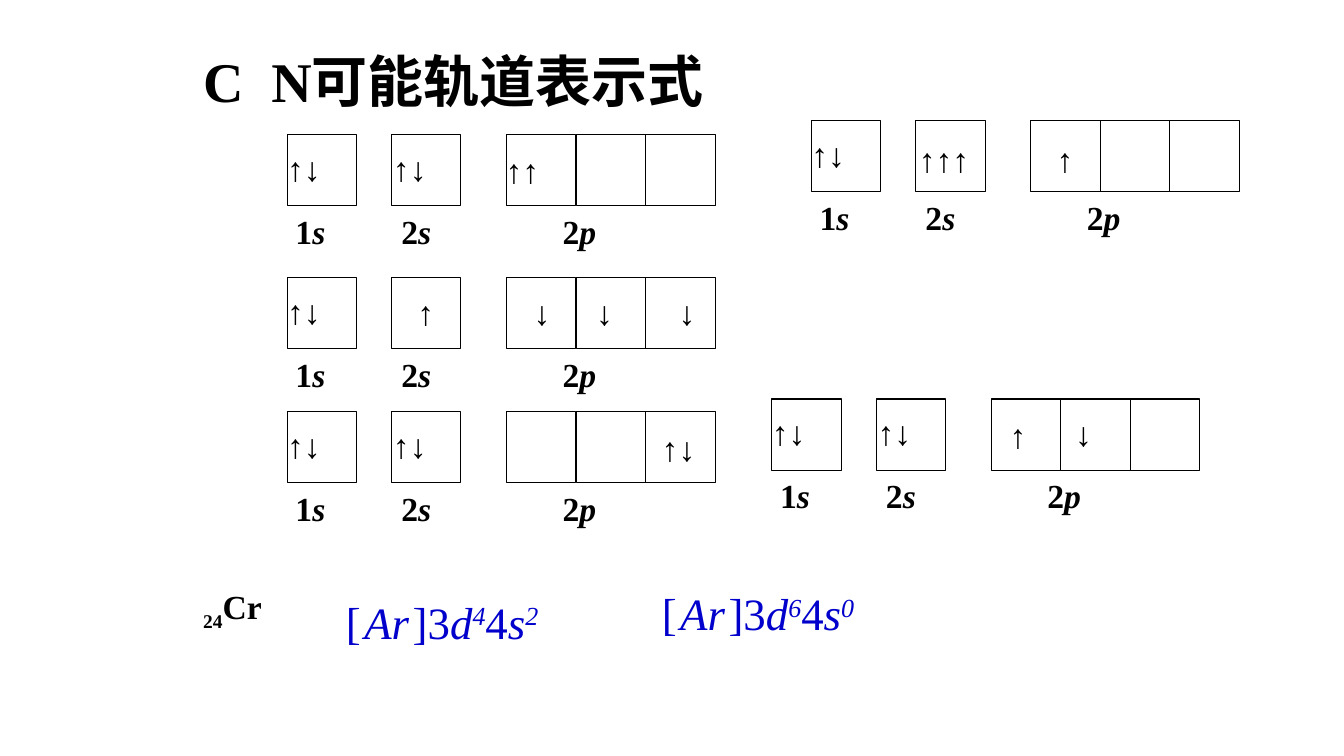
from dataclasses import dataclass, field
from typing import Any

from lxml.etree import SubElement
from pptx import Presentation
from pptx.dml.color import RGBColor
from pptx.enum.shapes import MSO_SHAPE
from pptx.enum.text import MSO_AUTO_SIZE
from pptx.oxml.ns import qn
from pptx.util import Inches, Pt

COLOURS = {"ink": "000000", "formula": "0000CC"}
SERIF, SANS = "Times New Roman", "Arial"

# The slide is a grid of 160 columns by 90 rows of square cells.
SLIDE_WIDTH, SLIDE_HEIGHT = Inches(13.33), Inches(7.5)
COLUMN, ROW = SLIDE_WIDTH / 160, SLIDE_HEIGHT / 90

BOX_WIDTH, BOX_HEIGHT = 8.28, 8.5
BOX_COLUMNS = [0, 12.4] + [26.1 + index * BOX_WIDTH for index in range(3)]
PAIR_WIDTH, SINGLE_WIDTH, LINE_HEIGHT = 6.4, 4.4, 6

BOLD = {"size": Pt(24), "bold": True, "name": SERIF}
ARROW = BOLD | {"name": SANS}
TITLE = BOLD | {"size": Pt(40)}
FORMULA = {"size": Pt(32), "name": SERIF}
FORMULA_ITALIC = FORMULA | {"italic": True}
FORMULA_GAP = FORMULA | {"size": Pt(10)}


@dataclass
class Run:
    text: str
    style: dict[str, Any]
    marks: dict[str, int] = field(default_factory=dict)


@dataclass
class Label:
    column: float
    row: float
    width: float
    runs: list[Run]
    height: float = LINE_HEIGHT
    colour: str = "ink"
    wrap: bool = False
    tab_stops: tuple[float, ...] = ()


@dataclass
class Diagram:
    column: float
    row: float
    electrons: list[Label]


def electrons(text: str, column: float, row: float, width: float = PAIR_WIDTH,
              **options: Any) -> Label:
    return Label(column, row, width, [Run(text, ARROW)], **options)


def subshell(number: str, letter: str, column: float, width: float) -> Label:
    return Label(column, BOX_HEIGHT, width,
                 [Run(number, BOLD), Run(letter, BOLD | {"italic": True})])


def configuration(column: float, row: float, d_count: str, s_count: str) -> Label:
    raised = {"baseline": 30000}
    return Label(column, row, 29, [
        Run("[", FORMULA), Run(" ", FORMULA_GAP), Run("Ar", FORMULA_ITALIC),
        Run(" ", FORMULA_GAP), Run("]3", FORMULA), Run("d", FORMULA_ITALIC),
        Run(d_count, FORMULA_ITALIC, raised), Run("4", FORMULA),
        Run("s", FORMULA_ITALIC), Run(s_count, FORMULA_ITALIC, raised),
    ], height=7.7, colour="formula", wrap=True)


SHARED_LABELS = [
    Label(-1.2, 1, PAIR_WIDTH, [Run("↑↓", BOLD)]),
    subshell("1", "s", -0.2, 6),
    subshell("2", "s", 12.4, 6),
    subshell("2", "p", 31.6, 6.4),
]
PAIRED_2S = electrons("↑↓", 11.4, 1)

DIAGRAMS = [
    Diagram(34.2, 16, [PAIRED_2S, electrons("↑↑", 24.8, 1.3, 13, wrap=True)]),
    Diagram(34.2, 33, [
        electrons("↑", 14.3, 1.2, SINGLE_WIDTH),
        electrons("\t↓\t↓\t↓", 24.8, 1.2, 26, wrap=True, tab_stops=(3.36, 10.8, 20.6)),
    ]),
    Diagram(34.2, 49, [PAIRED_2S, electrons("↑↓", 43.4, 1.3)]),
    Diagram(91.9, 47.5, [
        PAIRED_2S,
        electrons("↑", 27.1, 1.3, SINGLE_WIDTH),
        electrons("↓", 34.9, 1.1, SINGLE_WIDTH),
    ]),
    Diagram(96.6, 14.3, [
        electrons("↑", 28, 1.7, SINGLE_WIDTH),
        electrons("↑↑↑", 11.6, 1.7, 13, wrap=True),
    ]),
]

SLIDE_LABELS = [
    Label(23, 5, 67, [Run("C", TITLE), Run(" ", TITLE, {"spc": 1000}),
                      Run("N可能轨道表示式", TITLE)], height=9.2, wrap=True),
    Label(23, 69.2, 9.7, [Run("24", BOLD, {"baseline": -25000}), Run("Cr", BOLD)]),
    configuration(40, 70.2, "4", "2"),
    configuration(77.6, 69.2, "6", "0"),
]


def grid_frame(column: float, row: float, width: float, height: float) -> list[int]:
    return [round(column * COLUMN), round(row * ROW),
            round(width * COLUMN), round(height * ROW)]


def draw_label(shapes: Any, label: Label, column: float = 0, row: float = 0) -> None:
    """Draw a label whose place is counted from the given column and row."""
    text_box = shapes.add_textbox(*grid_frame(
        column + label.column, row + label.row, label.width, label.height))
    text_frame = text_box.text_frame
    text_frame.word_wrap = label.wrap
    text_frame.auto_size = MSO_AUTO_SIZE.SHAPE_TO_FIT_TEXT
    paragraph = text_frame.paragraphs[0]
    if label.tab_stops:
        tab_list = SubElement(paragraph._p.get_or_add_pPr(), qn("a:tabLst"))
        for stop in label.tab_stops:
            SubElement(tab_list, qn("a:tab"), pos=str(round(stop * COLUMN)), algn="l")
    for part in label.runs:
        run = paragraph.add_run()
        run.text = part.text
        for attribute, value in part.style.items():
            setattr(run.font, attribute, value)
        run.font.color.rgb = RGBColor.from_string(COLOURS[label.colour])
        for attribute, value in part.marks.items():
            run._r.get_or_add_rPr().set(attribute, str(value))


def draw_orbital_box(shapes: Any, column: float, row: float) -> None:
    box = shapes.add_shape(MSO_SHAPE.RECTANGLE,
                           *grid_frame(column, row, BOX_WIDTH, BOX_HEIGHT))
    box.shadow.inherit = False
    box.fill.background()
    box.line.color.rgb = RGBColor.from_string(COLOURS["ink"])
    box.line.width = Pt(0.75)


def draw_diagram(shapes: Any, diagram: Diagram) -> None:
    group_shapes = shapes.add_group_shape().shapes
    for box_column in BOX_COLUMNS:
        draw_orbital_box(group_shapes, diagram.column + box_column, diagram.row)
    for label in SHARED_LABELS + diagram.electrons:
        draw_label(group_shapes, label, diagram.column, diagram.row)


def main() -> None:
    presentation = Presentation()
    presentation.slide_width, presentation.slide_height = SLIDE_WIDTH, SLIDE_HEIGHT
    slide = presentation.slides.add_slide(presentation.slide_layouts[6])
    for diagram in DIAGRAMS:
        draw_diagram(slide.shapes, diagram)
    for label in SLIDE_LABELS:
        draw_label(slide.shapes, label)
    presentation.save("out.pptx")


if __name__ == "__main__":
    main()
